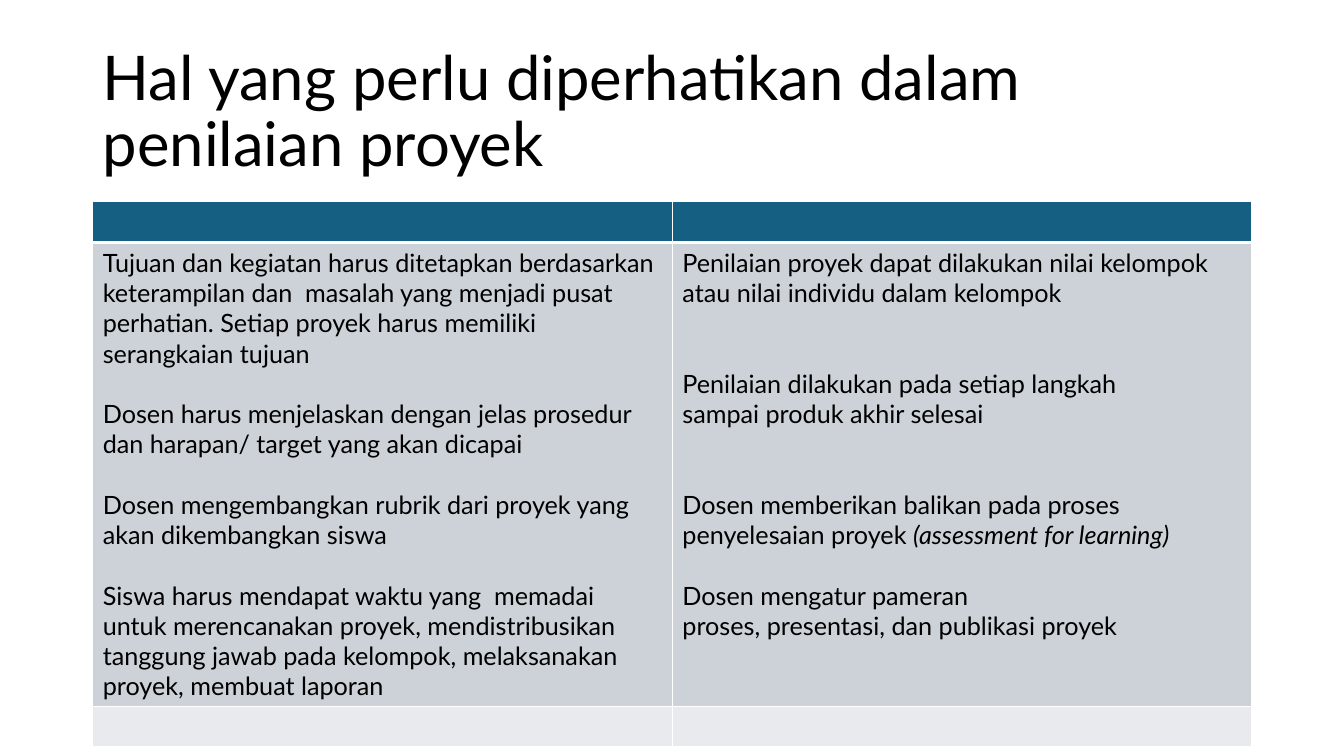
from lxml import etree
from pptx import Presentation
from pptx.dml.color import RGBColor
from pptx.enum.text import MSO_ANCHOR
from pptx.oxml.ns import qn
from pptx.util import Pt

MIDDLE = MSO_ANCHOR.MIDDLE
FONT = "Lato"
LINE = 21.6  # height of one 18 pt line
LEFT, WIDTH = 66.24, 828


def color(code):
    return RGBColor.from_string(code)


def add_run(para, text, size, slant=False):
    run = para.add_run()
    run.text = text
    run.font.name = FONT
    run.font.size = Pt(size)
    run.font.italic = slant
    run.font.color.rgb = color("000000")


deck = Presentation()
deck.slide_width, deck.slide_height = Pt(960), Pt(540)
slide = deck.slides.add_slide(deck.slide_layouts[6])

# Title
box = slide.shapes.add_textbox(Pt(LEFT), Pt(28.8), Pt(WIDTH), Pt(104.4))
frame = box.text_frame
frame.word_wrap = True
frame.vertical_anchor = MIDDLE
head = frame.paragraphs[0]
head.line_spacing = 0.9
add_run(head, "Hal yang perlu diperhatikan dalam  penilaian proyek", 44)

# Table grid: header, body and closing row
fills = ["156082", "CCD2D8", "E8EAED"]
heights = [29.2, 331.2, 29.2]
table = slide.shapes.add_table(3, 2, Pt(LEFT), Pt(144), Pt(WIDTH),
                               Pt(sum(heights))).table
for col in table.columns:
    col.width = Pt(WIDTH / 2)

for r, (fill, height) in enumerate(zip(fills, heights)):
    table.rows[r].height = Pt(height)
    for cell in table.rows[r].cells:
        cell.fill.solid()
        cell.fill.fore_color.rgb = color(fill)
        # White borders, thicker under the header
        props = cell._tc.get_or_add_tcPr()
        for i, side in enumerate("LRTB"):
            thick = (r, side) in [(0, "B"), (1, "T")]
            edge = etree.Element(qn("a:ln" + side), w=str(Pt(3 if thick else 1)))
            paint = etree.SubElement(edge, qn("a:solidFill"))
            etree.SubElement(paint, qn("a:srgbClr"), val="FFFFFF")
            props.insert(i, edge)

# Body text: lines of space before each paragraph, then its runs
goals = [
    (0, ["Tujuan dan kegiatan harus ditetapkan berdasarkan"]),
    (0, ["keterampilan dan  masalah yang menjadi pusat perhatian. "
         "Setiap proyek harus memiliki serangkaian tujuan"]),
    (1, ["Dosen harus menjelaskan dengan jelas prosedur dan harapan/ "
         "target yang akan dicapai"]),
    (1, ["Dosen mengembangkan rubrik dari proyek yang akan dikembangkan siswa"]),
    (1, ["Siswa harus mendapat waktu yang  memadai untuk merencanakan proyek, "
         "mendistribusikan tanggung jawab pada kelompok, melaksanakan proyek, "
         "membuat laporan"]),
]
grading = [
    (0, ["Penilaian proyek dapat dilakukan nilai kelompok atau nilai individu "
         "dalam kelompok"]),
    (2, ["Penilaian dilakukan pada setiap langkah"]),
    (0, ["sampai produk akhir selesai"]),
    (2, ["Dosen memberikan balikan pada proses penyelesaian proyek ",
         "(assessment for learning)"]),
    (1, ["Dosen mengatur pameran"]),
    (0, ["proses, presentasi, dan publikasi proyek"]),
]
for c, items in enumerate([goals, grading]):
    frame = table.cell(1, c).text_frame
    for i, (gap, runs) in enumerate(items):
        para = frame.add_paragraph() if i else frame.paragraphs[0]
        if gap:
            para.space_before = Pt(gap * LINE)
        for text in runs:
            add_run(para, text, 18, slant=text.startswith("("))

deck.save("out.pptx")
